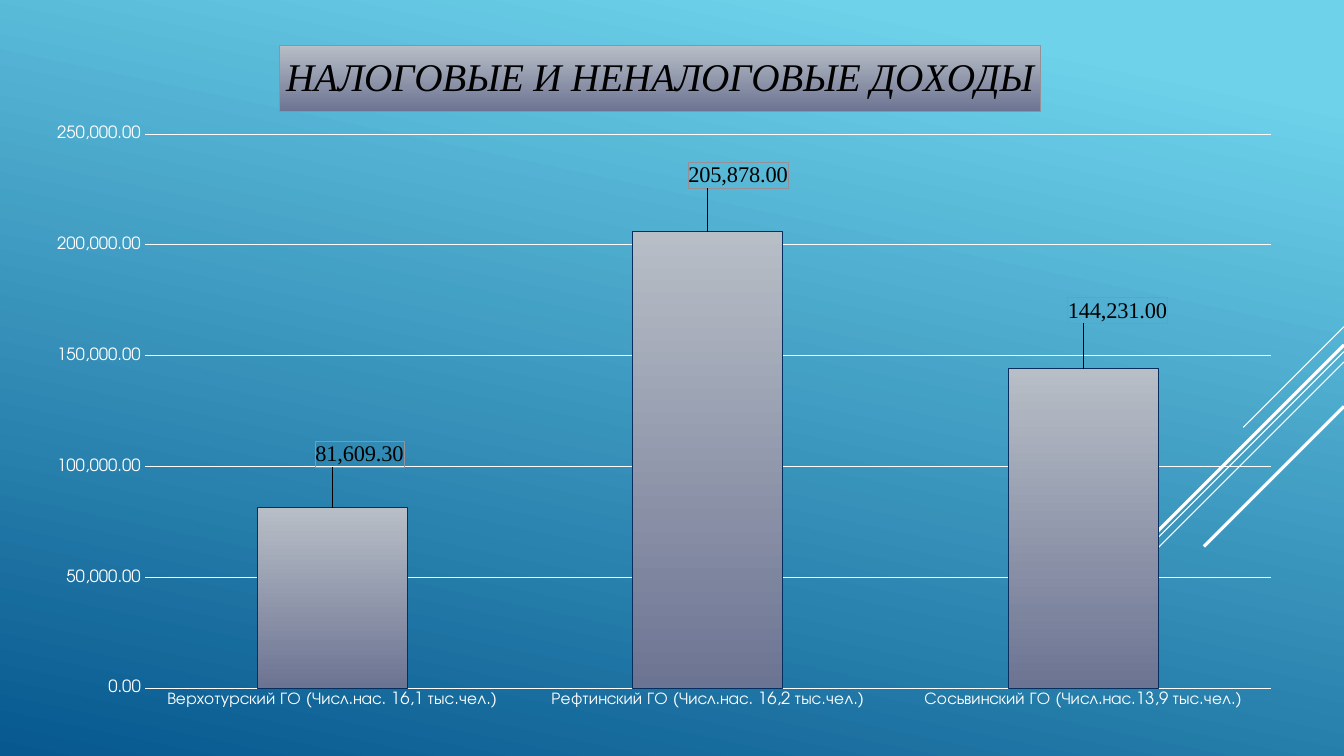
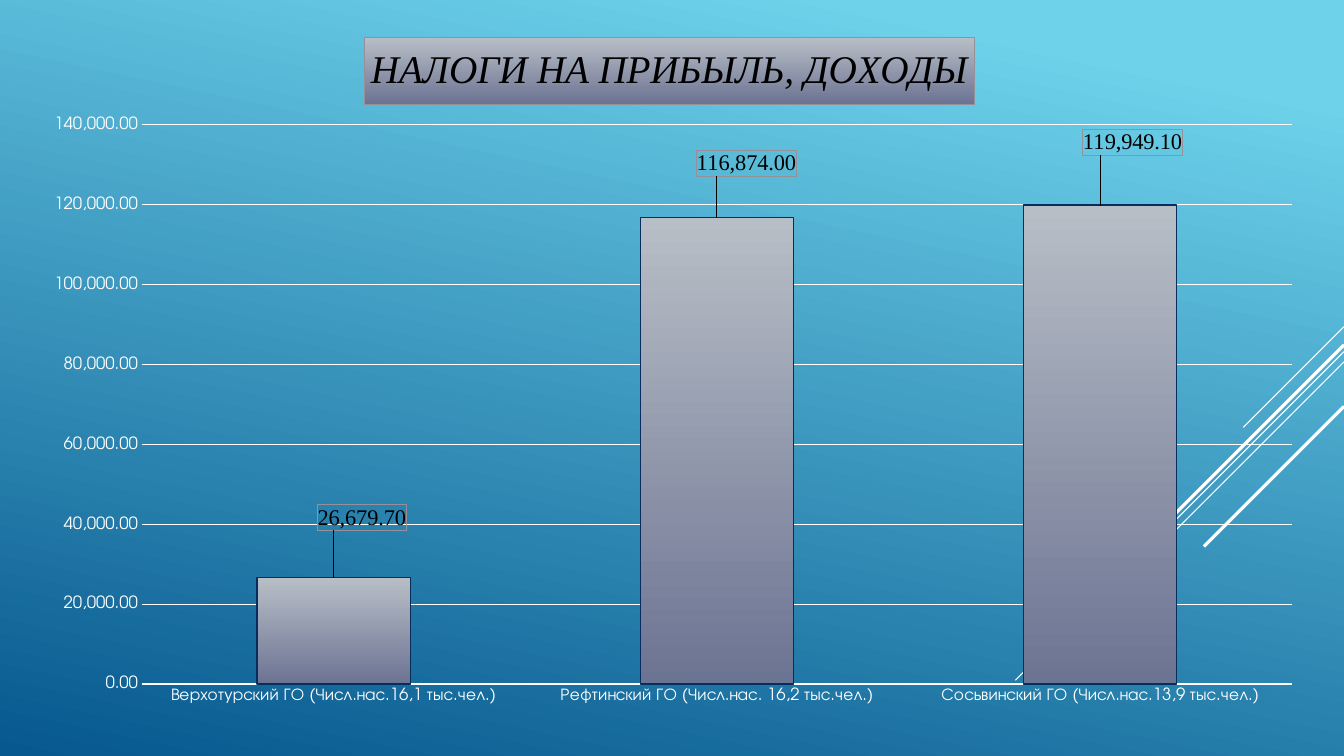
from dataclasses import dataclass
from typing import NamedTuple

from lxml.etree import SubElement
from pptx import Presentation
from pptx.chart.chart import Chart
from pptx.chart.data import CategoryChartData
from pptx.chart.series import BarSeries
from pptx.dml.color import RGBColor
from pptx.dml.fill import FillFormat
from pptx.enum.chart import XL_CHART_TYPE, XL_LABEL_POSITION, XL_TICK_MARK
from pptx.enum.shapes import MSO_CONNECTOR
from pptx.oxml import parse_xml
from pptx.oxml.ns import nsdecls, qn
from pptx.oxml.xmlchemy import BaseOxmlElement
from pptx.slide import Slide
from pptx.text.text import Font, TextFrame
from pptx.util import Cm, Pt

WHITE = RGBColor(0xFF, 0xFF, 0xFF)
BLACK = RGBColor(0x00, 0x00, 0x00)
SKY = RGBColor(0x6E, 0xD2, 0xEB)
DEEP_BLUE = RGBColor(0x06, 0x58, 0x8E)
SILVER = RGBColor(0xB8, 0xBE, 0xC6)
SLATE = RGBColor(0x6C, 0x74, 0x93)
NAVY = RGBColor(0x05, 0x2E, 0x5F)
FRAME_GREY = RGBColor(0x96, 0x90, 0x98)

AXIS_FONT = "TeX Gyre Adventor"
ACCENT_FONT = "Times New Roman"
NUMBER_FORMAT = "#,##0.00"
SLIDE_WIDTH, SLIDE_HEIGHT = 33.87, 19.05


class Box(NamedTuple):
    """A rectangle on the slide, in centimetres."""
    left: float
    top: float
    width: float
    height: float


class Point(NamedTuple):
    """A position or an offset, in centimetres."""
    x: float
    y: float


class Ray(NamedTuple):
    """A 45° line running down and left from the right edge, in centimetres."""
    top: float
    run: float
    weight: float


@dataclass(frozen=True)
class Bar:
    category: str
    value: float
    label_shift: Point


@dataclass(frozen=True)
class IncomeSlide:
    title: str
    title_at: Point
    frame: Box
    plot: Box
    axis_max: int
    axis_step: int
    bars: tuple[Bar, ...]


RAYS = (
    Ray(8.23, 2.54, 0.75),
    Ray(8.86, 8.28, 0.75),
    Ray(9.12, 5.27, 0.75),
    Ray(8.69, 4.85, 2.25),
    Ray(10.24, 3.53, 2.25),
)

INCOME_SLIDES = (
    IncomeSlide(
        title="НАЛОГОВЫЕ И НЕНАЛОГОВЫЕ ДОХОДЫ",
        title_at=Point(7.03, 1.13),
        frame=Box(0.81, 0.66, 31.85, 17.53),
        plot=Box(3.65, 3.38, 28.38, 13.96),
        axis_max=250000,
        axis_step=50000,
        bars=(
            Bar("Верхотурский ГО (Числ.нас. 16,1 тыс.чел.)", 81609.3, Point(0.68, -0.9)),
            Bar("Рефтинский ГО (Числ.нас. 16,2 тыс.чел.)", 205878, Point(0.76, -1)),
            Bar("Сосьвинский ГО (Числ.нас.13,9 тыс.чел.)", 144231, Point(0.86, -1.03)),
        ),
    ),
    IncomeSlide(
        title="НАЛОГИ НА ПРИБЫЛЬ, ДОХОДЫ",
        title_at=Point(9.17, 0.94),
        frame=Box(0.71, 0.46, 32.49, 17.63),
        plot=Box(3.58, 3.15, 28.98, 14.09),
        axis_max=140000,
        axis_step=20000,
        bars=(
            Bar("Верхотурский ГО (Числ.нас.16,1 тыс.чел.)", 26679.7, Point(0.71, -1.08)),
            Bar("Рефтинский ГО (Числ.нас. 16,2 тыс.чел.)", 116874, Point(0.74, -0.93)),
            Bar("Сосьвинский ГО (Числ.нас.13,9 тыс.чел.)", 119949.1, Point(0.81, -1.16)),
        ),
    ),
)


def format_font(font: Font, *, name: str, size: float, color: RGBColor,
                italic: bool = False) -> None:
    font.name = name
    font.size = Pt(size)
    font.bold = False
    font.italic = italic
    font.color.rgb = color


def write_text(frame: TextFrame, text: str, *, name: str, size: float,
               color: RGBColor, italic: bool = False) -> None:
    run = frame.paragraphs[0].add_run()
    run.text = text
    format_font(run.font, name=name, size=size, color=color, italic=italic)


def fill_gradient(fill: FillFormat, start: RGBColor, end: RGBColor, *,
                  start_at: float = 0, clockwise: float = 90) -> None:
    fill.gradient()
    fill.gradient_angle = 360 - clockwise
    first, last = fill.gradient_stops
    first.color.rgb, first.position = start, start_at
    last.color.rgb, last.position = end, 1


def place(parent: BaseOxmlElement, index: int, **settings: str | float) -> None:
    """Give a chart part a manual layout, as child number index."""
    for old in parent.findall(qn("c:layout")):
        parent.remove(old)
    layout = parse_xml(f"<c:layout {nsdecls('c')}><c:manualLayout/></c:layout>")
    for tag, value in settings.items():
        SubElement(layout[0], qn(f"c:{tag}")).set("val", str(value))
    parent.insert(index, layout)


def draw_rays(slide: Slide) -> None:
    for ray in RAYS:
        line = slide.shapes.add_connector(
            MSO_CONNECTOR.STRAIGHT, Cm(SLIDE_WIDTH), Cm(ray.top),
            Cm(SLIDE_WIDTH - ray.run), Cm(ray.top + ray.run))
        line.line.color.rgb = WHITE
        line.line.width = Pt(ray.weight)
        SubElement(line._element.spPr, qn("a:effectLst"))


def add_title(chart: Chart, content: IncomeSlide) -> None:
    title = chart.chart_title
    write_text(title.text_frame, content.title, name=ACCENT_FONT, size=28,
               color=BLACK, italic=True)
    fill_gradient(title.format.fill, SILVER, SLATE)
    title.format.line.color.rgb = FRAME_GREY
    title.format.line.width = Pt(0.5)
    frame = content.frame
    place(title._element, 1, xMode="edge", yMode="edge",
          x=(content.title_at.x - frame.left) / frame.width,
          y=(content.title_at.y - frame.top) / frame.height)


def style_axes(chart: Chart, content: IncomeSlide) -> None:
    for axis in (chart.category_axis, chart.value_axis):
        axis.major_tick_mark = axis.minor_tick_mark = XL_TICK_MARK.NONE
        axis.format.line.fill.background()
        format_font(axis.tick_labels.font, name=AXIS_FONT, size=12, color=WHITE)
    scale = chart.value_axis
    scale.minimum_scale, scale.maximum_scale = 0, content.axis_max
    scale.major_unit = content.axis_step
    scale.tick_labels.number_format = NUMBER_FORMAT
    scale.tick_labels.number_format_is_linked = False
    scale.has_major_gridlines = True
    scale.major_gridlines.format.line.color.rgb = WHITE
    scale.major_gridlines.format.line.width = Pt(0.75)


def add_value_labels(series: BarSeries, content: IncomeSlide) -> None:
    """Put a framed value above each bar, shifted by its own offset."""
    for index, bar in enumerate(content.bars):
        label = series.points[index].data_label
        format_font(label.font, name=ACCENT_FONT, size=16, color=BLACK)
        label.position = XL_LABEL_POSITION.OUTSIDE_END
        element = label._dLbl
        place(element, 1, x=bar.label_shift.x / content.frame.width,
              y=bar.label_shift.y / content.frame.height)
        for old in element.findall(qn("c:spPr")):
            element.remove(old)
        element.insert(2, parse_xml(
            f'<c:numFmt {nsdecls("c")} formatCode="{NUMBER_FORMAT}" sourceLinked="0"/>'))
        element.insert(3, parse_xml(
            f'<c:spPr {nsdecls("c", "a")}><a:noFill/><a:ln w="{Pt(0.5)}"><a:solidFill>'
            f'<a:srgbClr val="{FRAME_GREY}"/></a:solidFill></a:ln></c:spPr>'))


def add_income_chart(slide: Slide, content: IncomeSlide) -> None:
    data = CategoryChartData(number_format=NUMBER_FORMAT)
    data.categories = [bar.category for bar in content.bars]
    data.add_series(content.title, [bar.value for bar in content.bars])
    frame, plot_box = content.frame, content.plot
    chart = slide.shapes.add_chart(
        XL_CHART_TYPE.COLUMN_CLUSTERED, *map(Cm, frame), data).chart
    chart.has_legend = False
    format_font(chart.font, name=AXIS_FONT, size=10, color=WHITE)
    add_title(chart, content)
    style_axes(chart, content)
    place(chart._chartSpace.chart.plotArea, 0,
          layoutTarget="inner", xMode="edge", yMode="edge",
          x=(plot_box.left - frame.left) / frame.width,
          y=(plot_box.top - frame.top) / frame.height,
          w=plot_box.width / frame.width, h=plot_box.height / frame.height)

    columns = chart.plots[0]
    columns.gap_width = 150
    columns.vary_by_categories = False
    series = columns.series[0]
    fill_gradient(series.format.fill, SILVER, SLATE)
    series.format.line.color.rgb = NAVY
    series.format.line.width = Pt(0.75)
    add_value_labels(series, content)


def main() -> None:
    deck = Presentation()
    deck.slide_width, deck.slide_height = Cm(SLIDE_WIDTH), Cm(SLIDE_HEIGHT)
    fill_gradient(deck.slide_master.background.fill, SKY, DEEP_BLUE,
                  start_at=0.1, clockwise=102)
    blank = deck.slide_layouts.get_by_name("Blank")
    for content in INCOME_SLIDES:
        slide = deck.slides.add_slide(blank)
        draw_rays(slide)
        add_income_chart(slide, content)
    deck.save("out.pptx")


if __name__ == "__main__":
    main()
